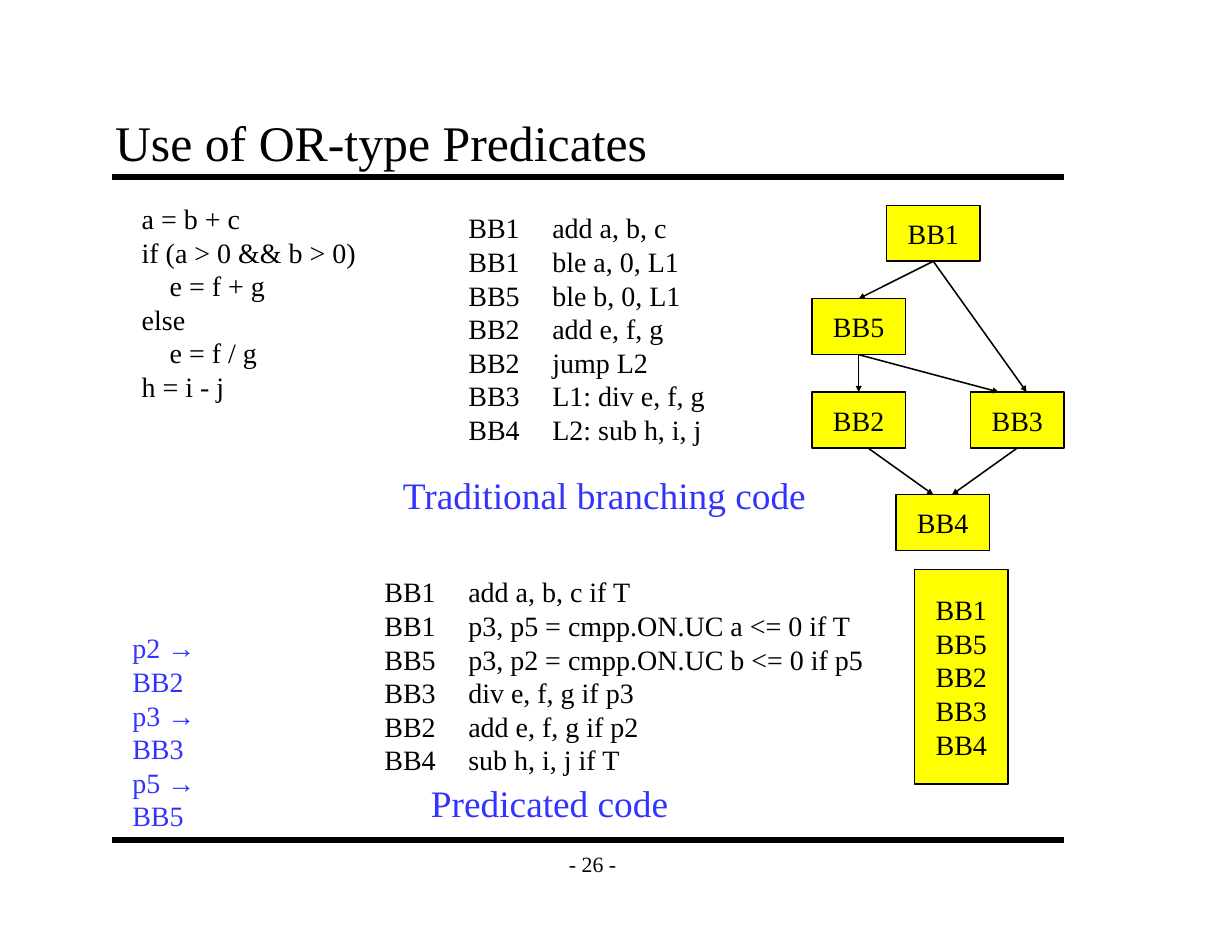
"""Build the slide on OR-type predicates with its code listings and flow graph."""
from dataclasses import dataclass

from lxml import etree
from pptx import Presentation
from pptx.dml.color import RGBColor
from pptx.enum import shapes, text
from pptx.oxml import ns
from pptx.util import Pt

COLOURS = {"ink": "000000", "accent": "3333FF", "block": "FFFF00"}
FONT = "Times New Roman"
LEADING = 1.2
CODE_INDENT = 18
BLOCK_WIDTH, BLOCK_HEIGHT = 60, 36
LISTING_LABEL_OFFSET = 54


@dataclass(frozen=True)
class Note:
    """A text box with its place and style."""
    lines: tuple
    left: float
    top: float
    width: float
    height: float
    size: float = 18
    colour: str = "ink"
    wrap: bool = False
    anchor: text.MSO_ANCHOR = text.MSO_ANCHOR.TOP
    align: text.PP_ALIGN = text.PP_ALIGN.LEFT
    inset: tuple = (7.2, 3.6, 7.2, 3.6)
    indented: tuple = ()


@dataclass(frozen=True)
class Block:
    """A basic block of the flow graph."""
    lines: tuple
    left: float
    top: float
    height: float = BLOCK_HEIGHT


@dataclass(frozen=True)
class Edge:
    """A branch between two blocks, with shifts from their centres."""
    source: str
    target: str
    source_shift: float = 0
    target_shift: float = 0


@dataclass(frozen=True)
class Listing:
    """Instructions paired with the block that each belongs to."""
    rows: tuple
    left: float
    top: float
    width: float
    height: float


BLOCKS = {
    name: Block((name,), left, top)
    for name, left, top in (
        ("BB1", 570, 132), ("BB5", 522, 192), ("BB2", 522, 252),
        ("BB3", 624, 252), ("BB4", 576, 318),
    )
}
MERGED = Block(("BB1", "BB5", "BB2", "BB3", "BB4"), 588, 366, 138)
EDGES = (
    Edge("BB1", "BB3", 0, 6),
    Edge("BB1", "BB5"),
    Edge("BB5", "BB3", 0, -12),
    Edge("BB5", "BB2"),
    Edge("BB2", "BB4", 6, -6),
    Edge("BB3", "BB4", 0, 6),
)
LISTINGS = (
    Listing((
        ("BB1", "add a, b, c"), ("BB1", "ble a, 0, L1"),
        ("BB5", "ble b, 0, L1"), ("BB2", "add e, f, g"),
        ("BB2", "jump L2"), ("BB3", "L1: div e, f, g"),
        ("BB4", "L2: sub h, i, j"),
    ), 348, 132, 116, 158),
    Listing((
        ("BB1", "add a, b, c if T"),
        ("BB1", "p3, p5 = cmpp.ON.UC a <= 0 if T"),
        ("BB5", "p3, p2 = cmpp.ON.UC b <= 0 if p5"),
        ("BB3", "div e, f, g if p3"), ("BB2", "add e, f, g if p2"),
        ("BB4", "sub h, i, j if T"),
    ), 294, 366, 272, 137),
)
NOTES = (
    Note(("- 26 -",), 354, 540, 54, 30, 14, anchor=text.MSO_ANCHOR.MIDDLE,
         align=text.PP_ALIGN.CENTER, inset=(8, 4, 8, 4)),
    Note(("Use of OR-type Predicates",), 66, 66, 612, 48, 32, wrap=True,
         anchor=text.MSO_ANCHOR.BOTTOM, inset=(8, 4, 8, 4)),
    Note(("a = b + c", "if (a > 0 && b > 0)", "e = f + g", "else",
          "e = f / g", "h = i - j"), 84, 126, 154, 137, indented=(2, 4)),
    Note(("Traditional branching code",), 252, 300, 313, 36, 24, "accent", True),
    Note(("Predicated code",), 270, 498, 313, 36, 24, "accent", True),
    Note(("p2 → BB2", "p3 → BB3", "p5 → BB5"), 78, 402, 92, 72,
         colour="accent", wrap=True, inset=(7.2, 3.6, 24, 3.6)),
)


def rgb(colour: str) -> RGBColor:
    """Look up a named colour."""
    return RGBColor.from_string(COLOURS[colour])


def write(frame, lines: tuple, size: float, colour: str, align,
          indented: tuple = ()) -> None:
    """Fill a text frame with one styled paragraph per line."""
    frame.text = "\n".join(lines)
    for index, paragraph in enumerate(frame.paragraphs):
        paragraph.alignment = align
        paragraph.line_spacing = Pt(size * LEADING)
        if index in indented:
            paragraph._p.get_or_add_pPr().set("marL", str(Pt(CODE_INDENT)))
        for run in paragraph.runs:
            run.font.name = FONT
            run.font.size = Pt(size)
            run.font.color.rgb = rgb(colour)


def draw_note(slide, note: Note) -> None:
    """Draw a text box."""
    frame = slide.shapes.add_textbox(
        Pt(note.left), Pt(note.top), Pt(note.width), Pt(note.height)).text_frame
    frame.word_wrap = note.wrap
    frame.vertical_anchor = note.anchor
    (frame.margin_left, frame.margin_top,
     frame.margin_right, frame.margin_bottom) = map(Pt, note.inset)
    write(frame, note.lines, note.size, note.colour, note.align, note.indented)


def draw_listing(slide, listing: Listing) -> None:
    """Draw the block labels and instructions side by side."""
    labels, instructions = zip(*listing.rows)
    draw_note(slide, Note(instructions, listing.left, listing.top,
                          listing.width, listing.height))
    draw_note(slide, Note(labels, listing.left - LISTING_LABEL_OFFSET,
                          listing.top, 48, listing.height))


def draw_block(slide, block: Block) -> None:
    """Draw a basic block."""
    box = slide.shapes.add_shape(
        shapes.MSO_SHAPE.RECTANGLE, Pt(block.left), Pt(block.top),
        Pt(BLOCK_WIDTH), Pt(block.height))
    box.shadow.inherit = False
    box.fill.solid()
    box.fill.fore_color.rgb = rgb("block")
    box.line.color.rgb = rgb("ink")
    box.line.width = Pt(1)
    box.text_frame.word_wrap = False
    box.text_frame.vertical_anchor = text.MSO_ANCHOR.MIDDLE
    write(box.text_frame, block.lines, 18, "ink", text.PP_ALIGN.CENTER)


def draw_line(slide, start: tuple, end: tuple, width: float,
              arrow: bool = False) -> None:
    """Draw a straight line, with an arrowhead at its end if asked."""
    line = slide.shapes.add_connector(
        shapes.MSO_CONNECTOR.STRAIGHT, *map(Pt, start + end))
    line.line.color.rgb = rgb("ink")
    line.line.width = Pt(width)
    if arrow:
        etree.SubElement(line.line._get_or_add_ln(), ns.qn("a:tailEnd"),
                         type="triangle", w="sm", len="sm")
    etree.SubElement(line._element.spPr, ns.qn("a:effectLst"))


def draw_edge(slide, edge: Edge) -> None:
    """Draw an arrow from the foot of one block to the top of another."""
    source, target = BLOCKS[edge.source], BLOCKS[edge.target]
    middle = BLOCK_WIDTH / 2
    draw_line(slide,
              (source.left + middle + edge.source_shift, source.top + source.height),
              (target.left + middle + edge.target_shift, target.top), 1, True)


def main() -> None:
    """Build and save the slide."""
    deck = Presentation()
    deck.slide_width, deck.slide_height = Pt(792), Pt(612)
    slide = deck.slides.add_slide(deck.slide_layouts[6])
    for height in (114, 540):
        draw_line(slide, (72, height), (684, height), 4)
    for note in NOTES:
        draw_note(slide, note)
    for listing in LISTINGS:
        draw_listing(slide, listing)
    for block in (*BLOCKS.values(), MERGED):
        draw_block(slide, block)
    for edge in EDGES:
        draw_edge(slide, edge)
    deck.save("out.pptx")


if __name__ == "__main__":
    main()
